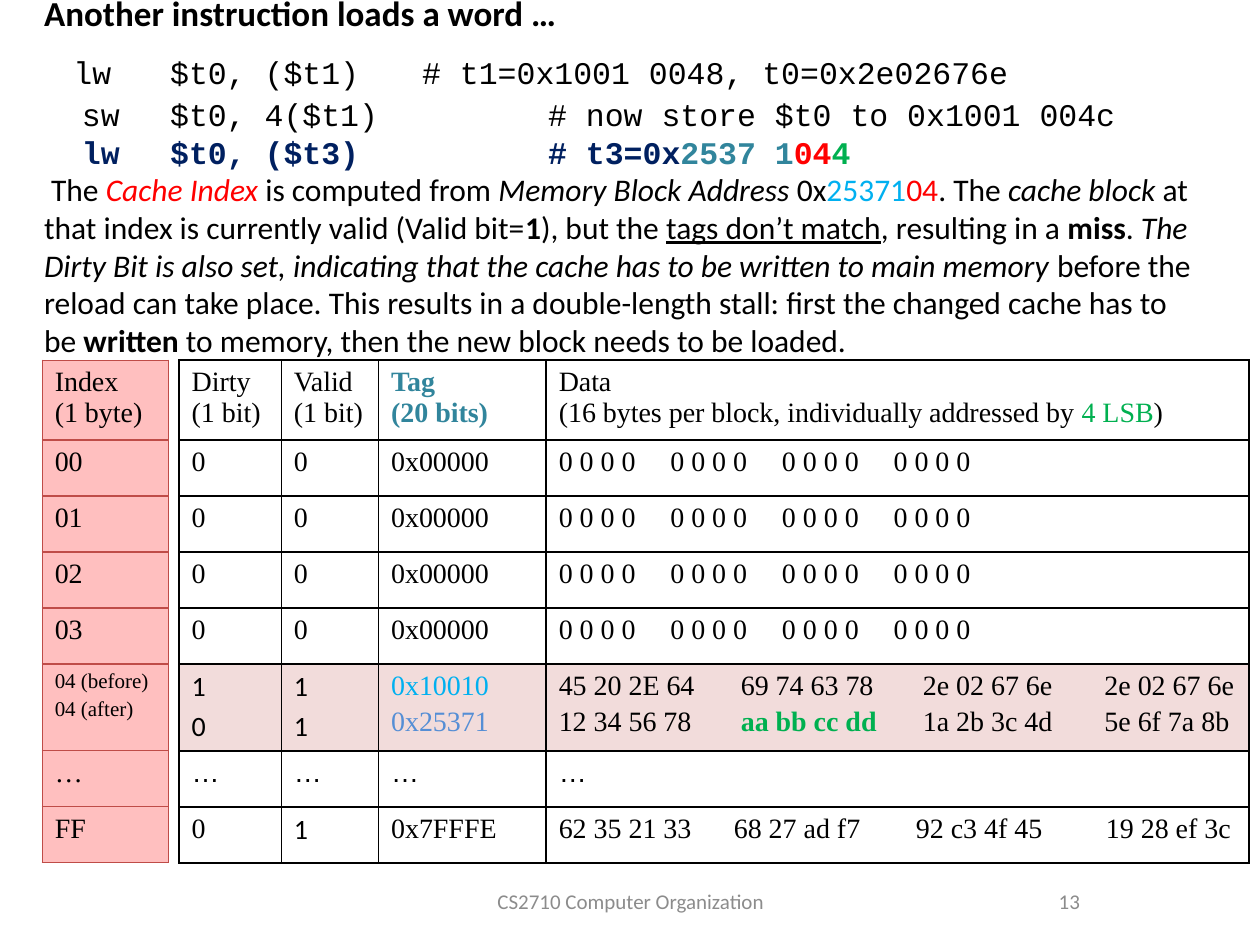
from pptx import Presentation
from pptx.dml.color import RGBColor
from pptx.enum.text import MSO_ANCHOR as Anchor, PP_ALIGN as Align
from pptx.oxml.ns import qn
from pptx.util import Cm, Pt
from lxml.etree import SubElement

COLORS = {
    "black": "000000", "navy": "002060", "teal": "31859C", "red": "FF0000",
    "green": "00B050", "sky": "00B0F0", "blue": "558ED5", "gray": "8C8C8C",
    "brick": "BF4C48", "pink": "FFBFBF", "rose": "F2DCDB",
}
SANS, SERIF, MONO, DOTS = "Calibri", "Times New Roman", "Courier New", "Arial"

# A span is plain text, or (text, color, flags) with flags among b, i and u.
HEADING = [("Another instruction loads a word …", "black", "b")]
CODE = [
    ["lw\t$t0, ($t1)\t# t1=0x1001 0048, t0=0x2e02676e"],
    ["  sw\t$t0, 4($t1)\t# now store $t0 to 0x1001 004c"],
    [("  lw\t$t0, ($t3)\t# t3=0x", "navy", "b"), ("2537 1", "teal", "b"),
     ("04", "red", "b"), ("4", "green", "b")],
]
CODE_INDENTS = [0.59, 0, 0]
CODE_TABS = [2.54, 10.16]
EXPLANATION = [
    "The ", ("Cache Index ", "red", "i"), "is computed from ",
    ("Memory Block Address", "black", "i"), " 0x", ("25371", "sky", ""),
    ("04", "red", ""), ". The ", ("cache block", "black", "i"),
    " at that index is currently valid (Valid bit=", ("1", "black", "b"),
    "), but the ", ("tags don’t match", "black", "u"), ", resulting in a ",
    ("miss", "black", "b"), ". ",
    ("The Dirty Bit is also set, indicating that the cache has to be written "
     "to main memory ", "black", "i"),
    "before the reload can take place. This results in a double-length stall: "
    "first the changed cache has to be ", ("written", "black", "b"),
    " to memory, then the new block needs to be loaded.",
]

# A cell is a list of paragraphs, each a list of spans.
EMPTY_ROW = [[["0"]], [["0"]], [["0x00000"]], [["\t".join(["0 0 0 0"] * 4)]]]
CACHE_ROWS = [
    [[["Dirty\v(1 bit)"]], [["Valid\v(1 bit)"]],
     [[("Tag\v(20 bits)", "teal", "b")]],
     [["Data\v(16 bytes per block, individually addressed by ",
       ("4 LSB", "green", ""), ")"]]],
    *[EMPTY_ROW] * 4,
    [[["1"], ["0"]], [["1"], ["1"]],
     [[("0x10010", "sky", "")], [("0x25371", "blue", "")]],
     [["45 20 2E 64\t69 74 63 78\t2e 02 67 6e\t2e 02 67 6e"],
      ["12 34 56 78\t", ("aa bb cc dd", "green", "b"),
       "\t1a 2b 3c 4d\t5e 6f 7a 8b"]]],
    [[["…"]]] * 4,
    [[["0"]], [["1"]], [["0x7FFFE"]],
     [["62 35 21 33\t68 27 ad f7\t92 c3 4f 45\t19 28 ef 3c"]]],
]
INDEX_ROWS = [[[[text]]] for text in ("Index\v(1 byte)", "00", "01", "02", "03")]
INDEX_ROWS += [[[["04 (before)"], ["04 (after)"]]], [[["…"]]], [[["FF"]]]]

BLOCK_ROW, DOTS_ROW, LAST_ROW = 5, 6, 7
ROW_HEIGHTS = [1.51, 1.13, 1.13, 1.13, 1.13, 1.75, 1.13, 1.13]
DATA_TABS = {BLOCK_ROW: [3.67, 7.34, 11], LAST_ROW: [3.53, 7.2, 11.03]}
EMPTY_TABS = [2.25, 4.5, 6.75]
TABLE_TOP = 7.26


def rgb(name):
    return RGBColor.from_string(COLORS[name])


def write(para, spans, font, size, color="black", tabs=(), indent=0):
    properties = para._p.get_or_add_pPr()
    if indent:
        properties.set("indent", str(Cm(indent)))
    if tabs:
        stops = SubElement(properties, qn("a:tabLst"))
        for tab in tabs:
            SubElement(stops, qn("a:tab"), pos=str(Cm(tab)), algn="l")
    for item in spans:
        text, shade, flags = (item, color, "") if isinstance(item, str) else item
        for number, line in enumerate(text.split("\v")):
            if number:
                para.add_line_break()
            span = para.add_run()
            span.text = line
            span.font.name, span.font.size = font, Pt(size)
            span.font.color.rgb = rgb(shade)
            span.font.bold = "b" in flags
            span.font.italic = "i" in flags
            span.font.underline = "u" in flags


def paragraphs(frame, count):
    return [frame.paragraphs[0]] + [frame.add_paragraph() for _ in range(count - 1)]


def add_box(page, left, top, width, height, anchor=Anchor.MIDDLE):
    frame = page.shapes.add_textbox(Cm(left), Cm(top), Cm(width), Cm(height)).text_frame
    frame.word_wrap = True
    frame.vertical_anchor = anchor
    return frame


def add_border(cell, color, points):
    properties = cell._tc.get_or_add_tcPr()
    for position, side in enumerate(("lnL", "lnR", "lnT", "lnB")):
        line = SubElement(properties, qn(f"a:{side}"), w=str(Pt(points)))
        fill = SubElement(line, qn("a:solidFill"))
        SubElement(fill, qn("a:srgbClr"), val=COLORS[color])
        properties.insert(position, line)


def add_grid(page, rows, left, widths, line_color, line_width, look):
    """Draw a table; look(row, column) gives font, size, fill and tab stops."""
    table = page.shapes.add_table(
        len(rows), len(widths), Cm(left), Cm(TABLE_TOP),
        Cm(sum(widths)), Cm(sum(ROW_HEIGHTS))).table
    table.first_row = table.horz_banding = False
    for column, width in zip(table.columns, widths):
        column.width = Cm(width)
    for r, (row, height) in enumerate(zip(rows, ROW_HEIGHTS)):
        table.rows[r].height = Cm(height)
        for c, content in enumerate(row):
            cell = table.cell(r, c)
            font, size, fill, tabs = look(r, c)
            if fill:
                cell.fill.solid()
                cell.fill.fore_color.rgb = rgb(fill)
            else:
                cell.fill.background()
            add_border(cell, line_color, line_width)
            paras = paragraphs(cell.text_frame, len(content))
            for number, (para, spans) in enumerate(zip(paras, content)):
                write(para, spans, font, size, tabs=tabs)
                if number:
                    para.space_before = Pt(size * 0.2)


def cache_look(row, column):
    sans = (row == BLOCK_ROW and column < 2) or (row, column) == (LAST_ROW, 1)
    font = DOTS if row == DOTS_ROW else SANS if sans else SERIF
    tabs = DATA_TABS.get(row, EMPTY_TABS) if column == 3 else ()
    return font, 16, "rose" if row == BLOCK_ROW else None, tabs


def index_look(row, column):
    return SERIF, 12 if row == BLOCK_ROW else 16, "pink", ()


def main():
    deck = Presentation()
    deck.slide_width, deck.slide_height = Cm(25.4), Cm(19.05)
    page = deck.slides.add_slide(deck.slide_layouts[6])

    frame = add_box(page, 0.64, 0, 23.7, 7.23, Anchor.BOTTOM)
    frame.margin_top = frame.margin_bottom = 0
    heading, *code, explanation = paragraphs(frame, len(CODE) + 2)
    write(heading, HEADING, SANS, 20)
    for para, spans, indent in zip(code, CODE, CODE_INDENTS):
        write(para, spans, MONO, 18, tabs=CODE_TABS, indent=indent)
    write(explanation, EXPLANATION, SANS, 18, indent=0.14)
    for para in (heading, *code, explanation):
        para.line_spacing = Pt(21.5)
    code[0].space_before, code[1].space_before = Pt(11.5), Pt(2.5)

    for text, left, width, align in (
            ("CS2710 Computer Organization", 8.69, 8.05, Align.CENTER),
            ("13", 18.21, 3.81, Align.RIGHT)):
        para = add_box(page, left, 17.65, width, 1.02).paragraphs[0]
        para.alignment = align
        write(para, [text], SANS, 12, "gray")

    add_grid(page, CACHE_ROWS, 3.61, [2.06, 1.96, 3.38, 14.17], "black", 1, cache_look)
    add_grid(page, INDEX_ROWS, 0.85, [2.54], "brick", 0.75, index_look)
    deck.save("out.pptx")


if __name__ == "__main__":
    main()
